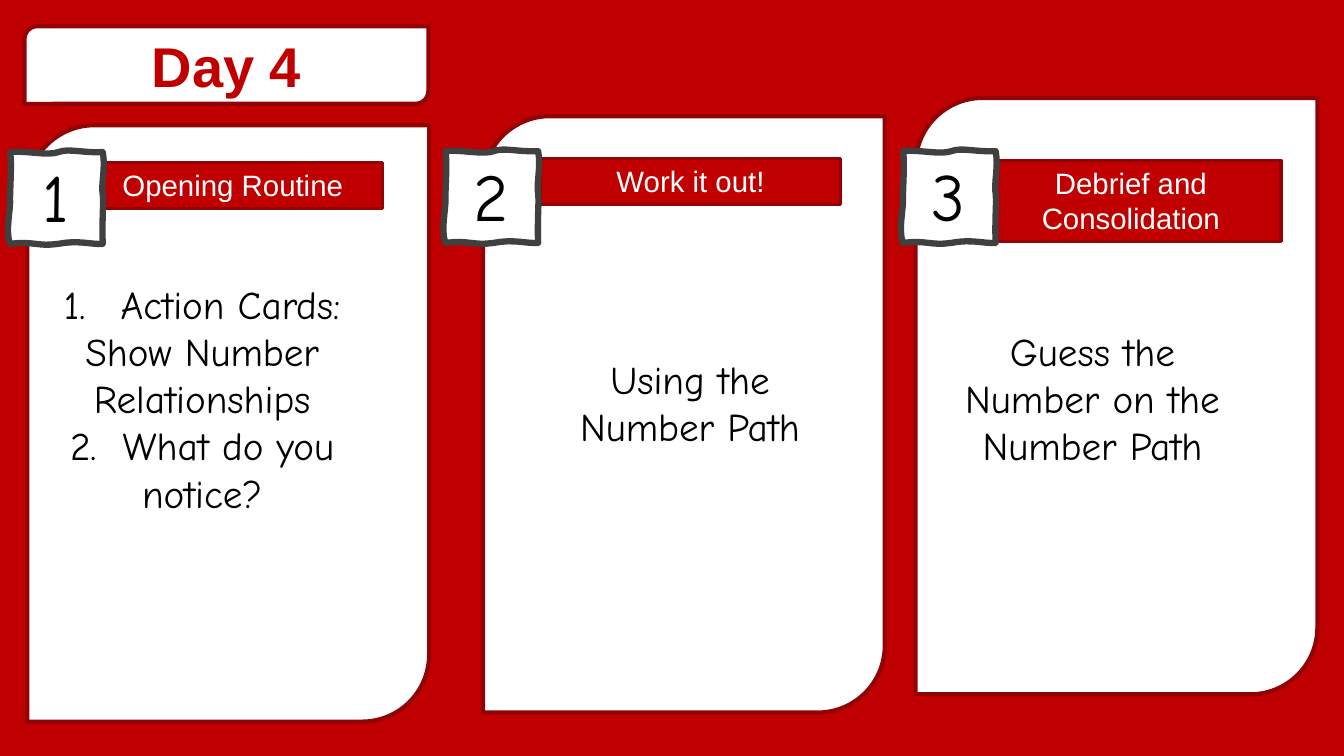
import lxml.etree
import pptx
import pptx.dml.color
import pptx.enum.shapes
import pptx.enum.text
import pptx.oxml.ns
import pptx.util
from dataclasses import dataclass

Pt = pptx.util.Pt
RGB = pptx.dml.color.RGBColor.from_string
SHAPE = pptx.enum.shapes.MSO_SHAPE
ANCHOR = pptx.enum.text.MSO_ANCHOR


@dataclass(frozen=True)
class Theme:
    """Colours, fonts and type sizes of the slide."""
    red: str = "C00000"
    dark_red: str = "920305"
    white: str = "FFFFFF"
    black: str = "000000"
    grey: str = "404040"
    sans: str = "Arial"
    hand: str = "Comic Neue"
    title: int = 40
    label: int = 21
    badge: int = 48
    body: int = 28


T = Theme()
PANEL_W, PANEL_H = 287, 426
LABEL_W, BODY_W = 214.5, 229.7
BADGE_SCALE = 0.72
BADGE_CURVES = [
    (14, -2, 37, 4, 48, 0), (58, -4, 72, 1, 92, 0),
    (95, 15, 90, 33, 92, 42), (93, 52, 91, 69, 92, 91),
    (81, 92, 68, 87, 48, 91), (27, 94, 24, 88, 0, 91),
    (-5, 78, 1, 56, 0, 46), (0, 36, 2, 9, 0, 0),
]


def paint(sp, fill, line, width):
    """Give a shape a flat fill and outline without a shadow."""
    sp.shadow.inherit = False
    sp.fill.solid()
    sp.fill.fore_color.rgb = RGB(fill)
    sp.line.color.rgb = RGB(line)
    sp.line.width = Pt(width)


def write(sp, lines, font, size, color, anchor=ANCHOR.MIDDLE, bold=False):
    """Fill a shape with centred paragraphs in one font."""
    tf = sp.text_frame
    tf.word_wrap = True
    tf.vertical_anchor = anchor
    for i, line in enumerate(lines):
        p = tf.paragraphs[0] if i == 0 else tf.add_paragraph()
        p.text = line
        p.alignment = pptx.enum.text.PP_ALIGN.CENTER
        p.font.name = font
        p.font.size = Pt(size)
        p.font.bold = bold
        p.font.color.rgb = RGB(color)


def number(p, indent):
    """Turn a paragraph into an automatically numbered item."""
    pPr = p._p.get_or_add_pPr()
    pPr.set("marL", str(Pt(indent)))
    pPr.set("indent", str(-Pt(indent)))
    bullet = lxml.etree.Element(pptx.oxml.ns.qn("a:buAutoNum"), type="arabicPeriod")
    pPr.insert(0, bullet)


def box(s, kind, x, y, w, h, fill, line_width):
    """Add a preset shape with the dark red outline."""
    sp = s.shapes.add_shape(kind, Pt(x), Pt(y), Pt(w), Pt(h))
    paint(sp, fill, T.dark_red, line_width)
    return sp


def curve_points(curves, steps=8):
    """Sample a chain of cubic curves that starts at the origin."""
    x0, y0 = 0, 0
    points = []
    for x1, y1, x2, y2, x3, y3 in curves:
        for i in range(1, steps + 1):
            t = i / steps
            u = 1 - t
            a, b, c, d = u**3, 3 * u * u * t, 3 * u * t * t, t**3
            points.append((a * x0 + b * x1 + c * x2 + d * x3,
                           a * y0 + b * y1 + c * y2 + d * y3))
        x0, y0 = x3, y3
    return points


def badge(s, x, y, text):
    """Draw a wavy hand-drawn square with a number."""
    points = [(Pt(x + BADGE_SCALE * px), Pt(y + BADGE_SCALE * py))
              for px, py in curve_points(BADGE_CURVES)]
    builder = s.shapes.build_freeform(Pt(x), Pt(y))
    builder.add_line_segments(points, close=True)
    sp = builder.convert_to_shape()
    paint(sp, T.white, T.grey, 4.5)
    write(sp, [text], T.hand, T.badge, T.black, ANCHOR.TOP)


def title(s, x, y, w, h, text):
    """Draw the day banner."""
    sp = box(s, SHAPE.ROUND_2_DIAG_RECTANGLE, x, y, w, h, T.white, 3)
    write(sp, [text], T.sans, T.title, T.red, bold=True)


def column(s, x, y, num, label, label_at, badge_at, body, body_at):
    """Draw one panel with its label, badge and body text."""
    box(s, SHAPE.ROUND_2_DIAG_RECTANGLE, x, y, PANEL_W, PANEL_H, T.white, 3)

    dx, dy, h = label_at
    sp = box(s, SHAPE.RECTANGLE, x + dx, y + dy, LABEL_W, h, T.red, 2.25)
    write(sp, [label], T.sans, T.label, T.white, ANCHOR.TOP)

    dx, dy = badge_at
    badge(s, x + dx, y + dy, str(num))

    dx, dy, h = body_at
    sp = s.shapes.add_textbox(Pt(x + dx), Pt(y + dy), Pt(BODY_W), Pt(h))
    write(sp, body, T.hand, T.body, T.black)
    if len(body) > 1:
        number(sp.text_frame.paragraphs[0], 40.5)


def main():
    """Build the slide and save it."""
    prs = pptx.Presentation()
    prs.slide_width, prs.slide_height = Pt(960), Pt(540)
    s = prs.slides.add_slide(prs.slide_layouts[6])
    s.background.fill.solid()
    s.background.fill.fore_color.rgb = RGB(T.red)

    title(s, 17.5, 18.7, 288.5, 55.5, "Day 4")
    columns = [
        (19.5, 89.5, "Opening Routine", (39.5, 26.5, 33), (-12.3, 19.2),
         ["Action Cards:", "Show Number Relationships", "2.  What do you notice?"],
         (10, 106.5, 177)),
        (345, 83, "Work it out!", (41, 30, 33), (-26.8, 25),
         ["Using the Number Path"], (33, 167, 75)),
        (654, 70, "Debrief and Consolidation", (46.5, 44.5, 58), (-9, 38),
         ["Guess the Number on the Number Path"], (11.5, 159.7, 109)),
    ]
    for num, (x, y, label, label_at, badge_at, body, body_at) in enumerate(columns, 1):
        column(s, x, y, num, label, label_at, badge_at, body, body_at)
    prs.save("out.pptx")


if __name__ == "__main__":
    main()
